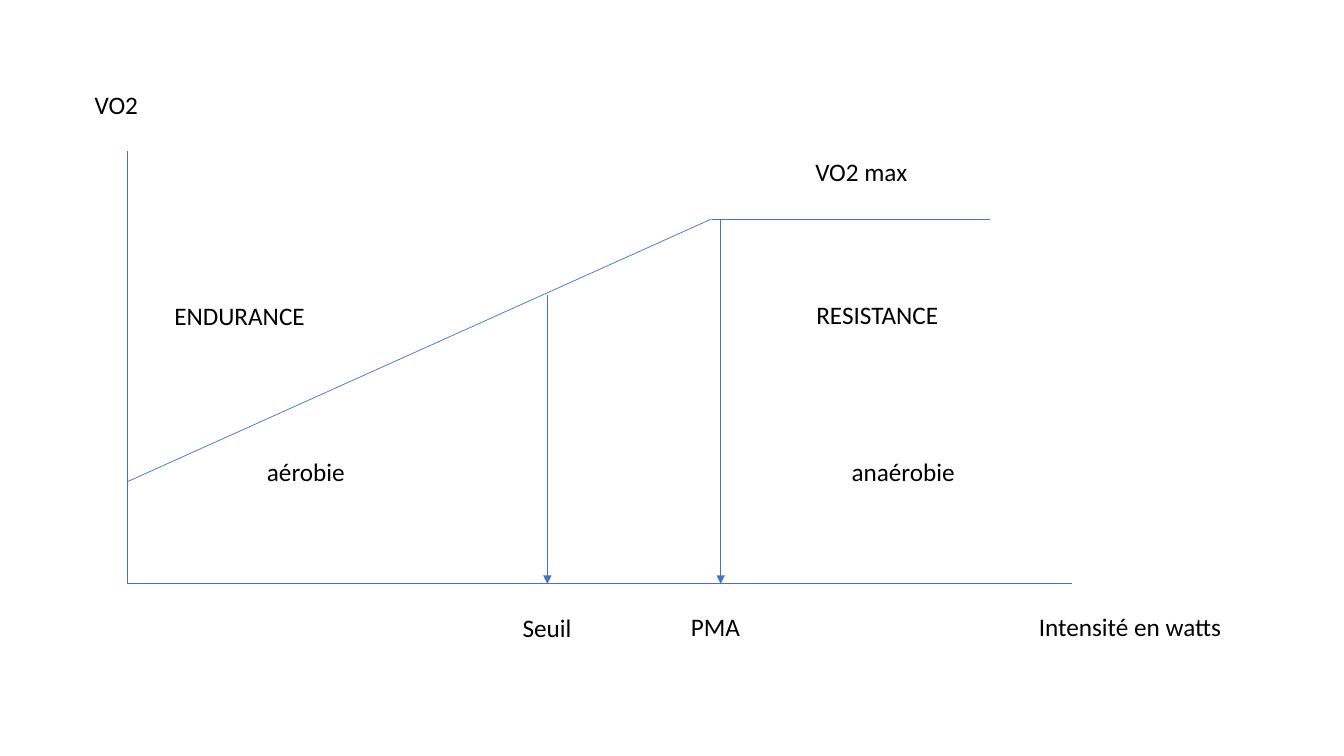
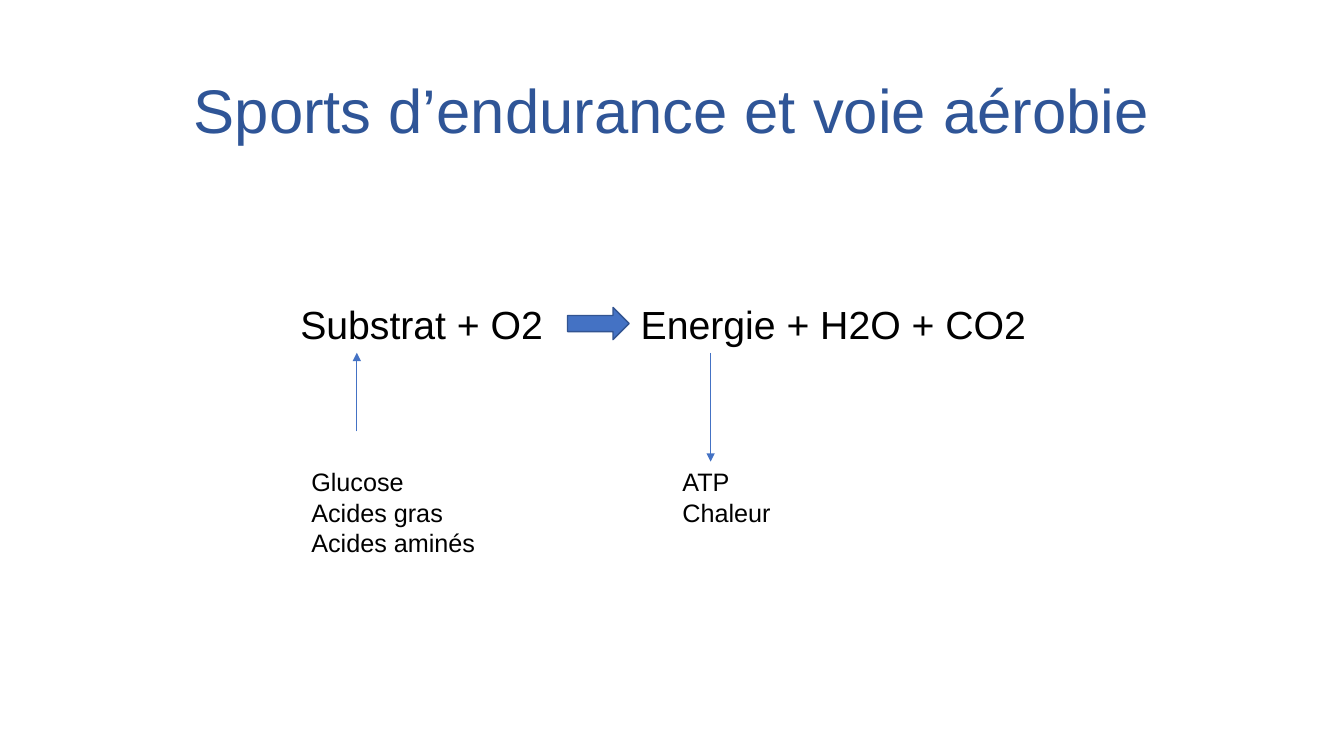
import pptx
import pptx.dml.color
import pptx.enum.shapes
import pptx.enum.text
import pptx.oxml.ns
import pptx.util
from lxml import etree

Pt = pptx.util.Pt
ACCENT = "4472C4"
OUTLINE = "325491"
TITLE = "2F5597"
BLACK = "000000"


def rgb(value):
    return pptx.dml.color.RGBColor.from_string(value)


def write(tf, text, font="Arial", size=18, color=BLACK, align=None, spacing=None):
    """Fill a text frame, one paragraph per line of text."""
    tf.word_wrap = True
    for i, line in enumerate(text.split("\n")):
        p = tf.paragraphs[0] if i == 0 else tf.add_paragraph()
        p.alignment = align
        p.line_spacing = spacing
        r = p.add_run()
        r.text = line
        r.font.name = font
        r.font.size = Pt(size)
        r.font.color.rgb = rgb(color)


def add_text(s, text, left, top, width, height=29, **style):
    sp = s.shapes.add_textbox(Pt(left), Pt(top), Pt(width), Pt(height))
    write(sp.text_frame, text, **style)
    sp.text_frame.auto_size = pptx.enum.text.MSO_AUTO_SIZE.SHAPE_TO_FIT_TEXT


def add_line(s, start, end, arrow=False):
    line = s.shapes.add_connector(
        pptx.enum.shapes.MSO_CONNECTOR.STRAIGHT, *map(Pt, start + end))
    line.line.color.rgb = rgb(ACCENT)
    line.line.width = Pt(0.5)
    qn = pptx.oxml.ns.qn
    if arrow:
        etree.SubElement(line.line._get_or_add_ln(), qn("a:tailEnd"), type="triangle")
    etree.SubElement(line._element.spPr, qn("a:effectLst"))


def add_title(s, text):
    sp = s.shapes.title
    sp.left, sp.top, sp.width, sp.height = Pt(66), Pt(28.75), Pt(828), Pt(104.4)
    tf = sp.text_frame
    write(tf, text, size=44, color=TITLE,
          align=pptx.enum.text.PP_ALIGN.CENTER, spacing=0.9)
    tf.vertical_anchor = pptx.enum.text.MSO_ANCHOR.MIDDLE
    tf.auto_size = pptx.enum.text.MSO_AUTO_SIZE.NONE


def add_block_arrow(s, left, top, width, height):
    sp = s.shapes.add_shape(pptx.enum.shapes.MSO_SHAPE.RIGHT_ARROW,
                            Pt(left), Pt(top), Pt(width), Pt(height))
    sp.shadow.inherit = False
    sp.fill.solid()
    sp.fill.fore_color.rgb = rgb(ACCENT)
    sp.line.color.rgb = rgb(OUTLINE)
    sp.line.width = Pt(1)


def build_vo2_curve(prs):
    s = prs.slides.add_slide(prs.slide_layouts[6])
    axis_x, axis_y = 90.7, 417
    threshold_x, pma_x = 391, 514.8
    plateau_x, plateau_y = 508.3, 156.4

    add_line(s, (axis_x, axis_y), (765.4, axis_y))
    add_line(s, (axis_x, axis_y), (axis_x, 108))
    add_line(s, (axis_x, 344.2), (plateau_x, plateau_y))
    add_line(s, (plateau_x, plateau_y), (707, plateau_y))
    for x, y in ((threshold_x, 211), (pma_x, plateau_y)):
        add_line(s, (x, y), (x, axis_y), arrow=True)

    for text, left, top, width in (
        ("VO2", 60.5, 60.5, 67),
        ("VO2 max", 575.3, 108, 131.8),
        ("ENDURANCE", 117.4, 211, 167),
        ("RESISTANCE", 576, 210.4, 159),
        ("aérobie", 183.6, 322.4, 160.6),
        ("anaérobie", 601.2, 322.4, 128.2),
        ("Seuil", 366.2, 433.8, 77),
        ("PMA", 486.3, 433, 59),
        ("Intensité en watts", 735, 433, 151.2),
    ):
        add_text(s, text, left, top, width, font="Calibri")


def build_aerobic_pathway(prs):
    s = prs.slides.add_slide(prs.slide_layouts[5])
    add_title(s, "Sports d’endurance et voie aérobie")

    equation_y, details_y = 211, 329.8
    add_text(s, "Substrat + O2", 207.4, equation_y, 195, 41, size=28)
    add_block_arrow(s, 405.4, 219.6, 44, 23)
    add_text(s, "Energie + H2O + CO2", 450.6, equation_y, 302, 41, size=28)

    add_text(s, "Glucose\nAcides gras\nAcides aminés", 215.3, details_y, 139, 72.7)
    add_text(s, "ATP\nChaleur", 480.3, details_y, 90, 51)
    add_line(s, (254.9, 308.2), (254.9, 252), arrow=True)
    add_line(s, (507.6, 252), (507.6, details_y), arrow=True)


def main():
    prs = pptx.Presentation()
    prs.slide_width, prs.slide_height = Pt(960), Pt(540)
    build_vo2_curve(prs)
    build_aerobic_pathway(prs)
    prs.save("out.pptx")


if __name__ == "__main__":
    main()
